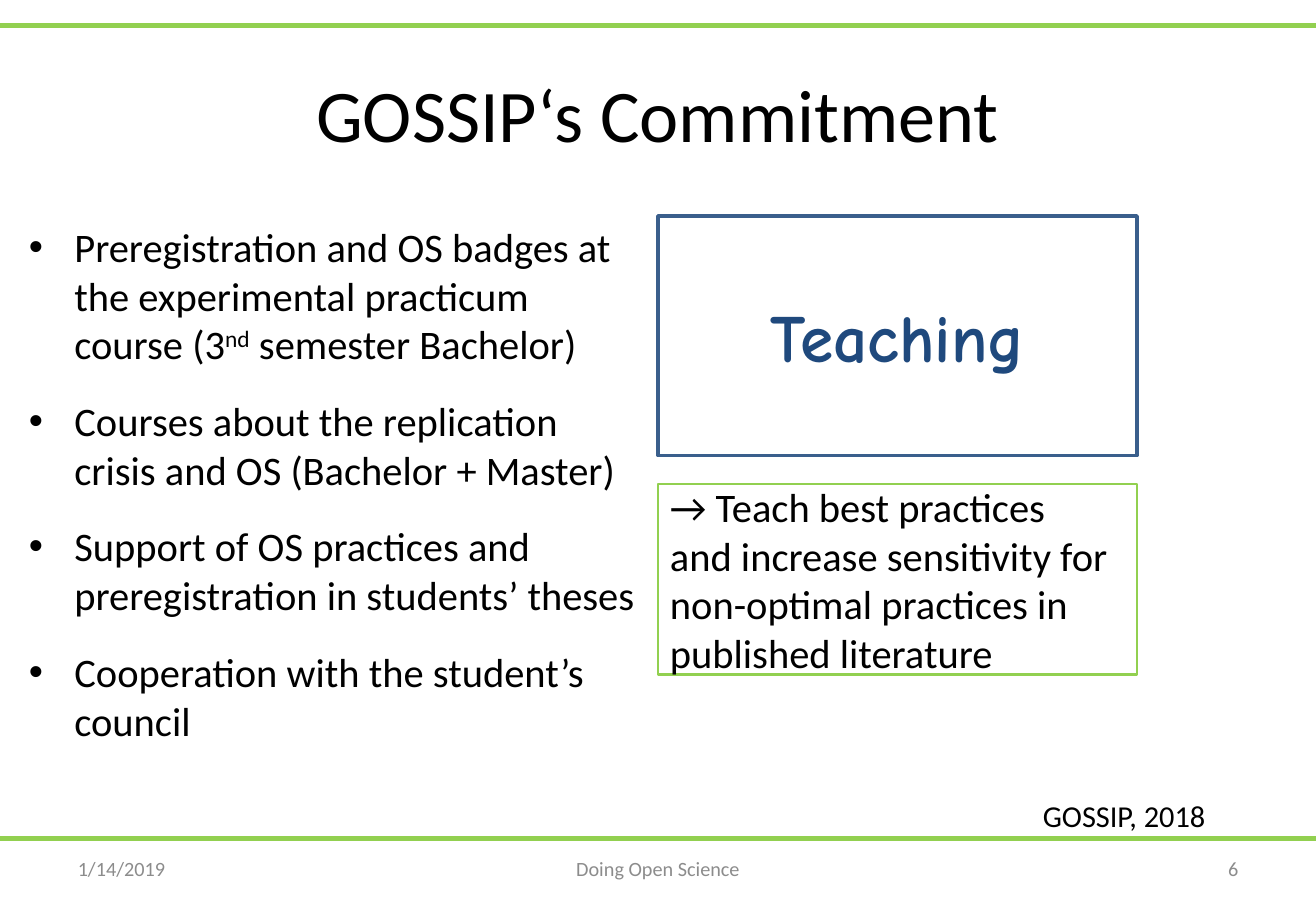
from dataclasses import dataclass

from lxml.etree import SubElement
from pptx import Presentation
from pptx.dml.color import RGBColor
from pptx.enum.shapes import MSO_CONNECTOR as Connector, MSO_SHAPE as Shape
from pptx.enum.text import MSO_ANCHOR as Anchor, PP_ALIGN as Align
from pptx.oxml.ns import qn
from pptx.slide import Slide
from pptx.text.text import TextFrame
from pptx.util import Pt


@dataclass(frozen=True)
class Theme:
    text: str = "000000"
    muted: str = "8C8C8C"
    white: str = "FFFFFF"
    green: str = "92D050"
    blue: str = "3A5F8C"
    navy: str = "1F497D"
    body_font: str = "Calibri"
    accent_font: str = "Comic Neue"
    title_size: float = 44
    topic_size: float = 40
    body_size: float = 24
    source_size: float = 18
    footer_size: float = 12


@dataclass(frozen=True)
class Box:
    left: float
    top: float
    width: float
    height: float


@dataclass(frozen=True)
class Style:
    size: float
    color: str
    font: str
    align: Align = Align.LEFT
    anchor: Anchor = Anchor.MIDDLE
    bold: bool = False


@dataclass(frozen=True)
class Label:
    text: str
    box: Box
    style: Style


@dataclass(frozen=True)
class Panel:
    label: Label
    outline: str
    weight: float
    fill: str | None = None


THEME = Theme()
WIDTH, HEIGHT = 780, 540
MARGIN = 39
RULE_TOPS = (15, 497)
FOOTER_TOP, FOOTER_HEIGHT = 500.5, 29
PANEL_LEFT, PANEL_WIDTH = 390, 284
BULLET_INDENT = 27

TITLE = Label("GOSSIP‘s Commitment", Box(MARGIN, 21.6, WIDTH - 2 * MARGIN, 90),
              Style(THEME.title_size, THEME.text, THEME.body_font, Align.CENTER))
BODY_BOX = Box(10, 128, 374, 356)
BODY_STYLE = Style(THEME.body_size, THEME.text, THEME.body_font, anchor=Anchor.TOP)
BULLETS = (
    ("Preregistration and OS badges at the experimental practicum course (3",
     "nd", " semester Bachelor)"),
    ("Courses about the replication crisis and OS (Bachelor + Master)",),
    ("Support of OS practices and preregistration in students’ theses",),
    ("Cooperation with the student’s council",),
)
PANELS = (
    Panel(Label("Teaching", Box(PANEL_LEFT, 128, PANEL_WIDTH, 142),
                Style(THEME.topic_size, THEME.navy, THEME.accent_font, Align.CENTER, bold=True)),
          THEME.blue, 2, THEME.white),
    Panel(Label("→ Teach best practices\vand increase sensitivity for\v"
                "non-optimal practices in published literature",
                Box(PANEL_LEFT, 287, PANEL_WIDTH, 113),
                Style(THEME.body_size, THEME.text, THEME.body_font)),
          THEME.green, 1.5),
)


def footer(text: str, left: float, width: float, align: Align) -> Label:
    return Label(text, Box(left, FOOTER_TOP, width, FOOTER_HEIGHT),
                 Style(THEME.footer_size, THEME.muted, THEME.body_font, align))


LABELS = (
    footer("1/14/2019", MARGIN, 182, Align.LEFT),
    footer("Doing Open Science", 266.5, 247, Align.CENTER),
    footer("6", WIDTH - MARGIN - 182, 182, Align.RIGHT),
    Label("GOSSIP, 2018", Box(611, 469, 119, 29),
          Style(THEME.source_size, THEME.text, THEME.body_font, anchor=Anchor.TOP)),
)


def lengths(box: Box) -> tuple[Pt, Pt, Pt, Pt]:
    return Pt(box.left), Pt(box.top), Pt(box.width), Pt(box.height)


def format_text(tf: TextFrame, style: Style) -> None:
    tf.word_wrap = True
    tf.vertical_anchor = style.anchor
    for p in tf.paragraphs:
        p.alignment = style.align
        for r in p.runs:
            r.font.name = style.font
            r.font.size = Pt(style.size)
            r.font.bold = style.bold
            r.font.color.rgb = RGBColor.from_string(style.color)


def add_rule(slide: Slide, top: float) -> None:
    line = slide.shapes.add_connector(Connector.STRAIGHT, Pt(0), Pt(top), Pt(WIDTH), Pt(top))
    line.line.color.rgb = RGBColor.from_string(THEME.green)
    line.line.width = Pt(3)
    SubElement(line._element.spPr, qn("a:effectLst"))


def set_title(slide: Slide, label: Label) -> None:
    sp = slide.shapes.title
    sp.left, sp.top, sp.width, sp.height = lengths(label.box)
    sp.text_frame.text = label.text
    format_text(sp.text_frame, label.style)


def add_label(slide: Slide, label: Label) -> None:
    tf = slide.shapes.add_textbox(*lengths(label.box)).text_frame
    tf.text = label.text
    format_text(tf, label.style)


def add_panel(slide: Slide, panel: Panel) -> None:
    sp = slide.shapes.add_shape(Shape.RECTANGLE, *lengths(panel.label.box))
    sp.shadow.inherit = False
    if panel.fill:
        sp.fill.solid()
        sp.fill.fore_color.rgb = RGBColor.from_string(panel.fill)
    else:
        sp.fill.background()
    sp.line.color.rgb = RGBColor.from_string(panel.outline)
    sp.line.width = Pt(panel.weight)
    sp.text_frame.text = panel.label.text
    format_text(sp.text_frame, panel.label.style)


def add_bullets(slide: Slide) -> None:
    tf = slide.shapes.add_textbox(*lengths(BODY_BOX)).text_frame
    for i, parts in enumerate(BULLETS):
        p = tf.add_paragraph() if i else tf.paragraphs[0]
        p.space_before, p.space_after = Pt(4.8), Pt(12)
        pPr = p._p.get_or_add_pPr()
        pPr.set("marL", str(Pt(BULLET_INDENT)))
        pPr.set("indent", str(-Pt(BULLET_INDENT)))
        SubElement(pPr, qn("a:buFont"), typeface="Arial")
        SubElement(pPr, qn("a:buChar"), char="•")
        for j, part in enumerate(parts):
            r = p.add_run()
            r.text = part
            if j == 1:
                r._r.get_or_add_rPr().set("baseline", "30000")
    format_text(tf, BODY_STYLE)


def main() -> None:
    prs = Presentation()
    prs.slide_width, prs.slide_height = Pt(WIDTH), Pt(HEIGHT)
    slide = prs.slides.add_slide(prs.slide_layouts[5])
    for top in RULE_TOPS:
        add_rule(slide, top)
    set_title(slide, TITLE)
    for label in LABELS:
        add_label(slide, label)
    add_bullets(slide)
    for panel in PANELS:
        add_panel(slide, panel)
    prs.save("out.pptx")


if __name__ == "__main__":
    main()
